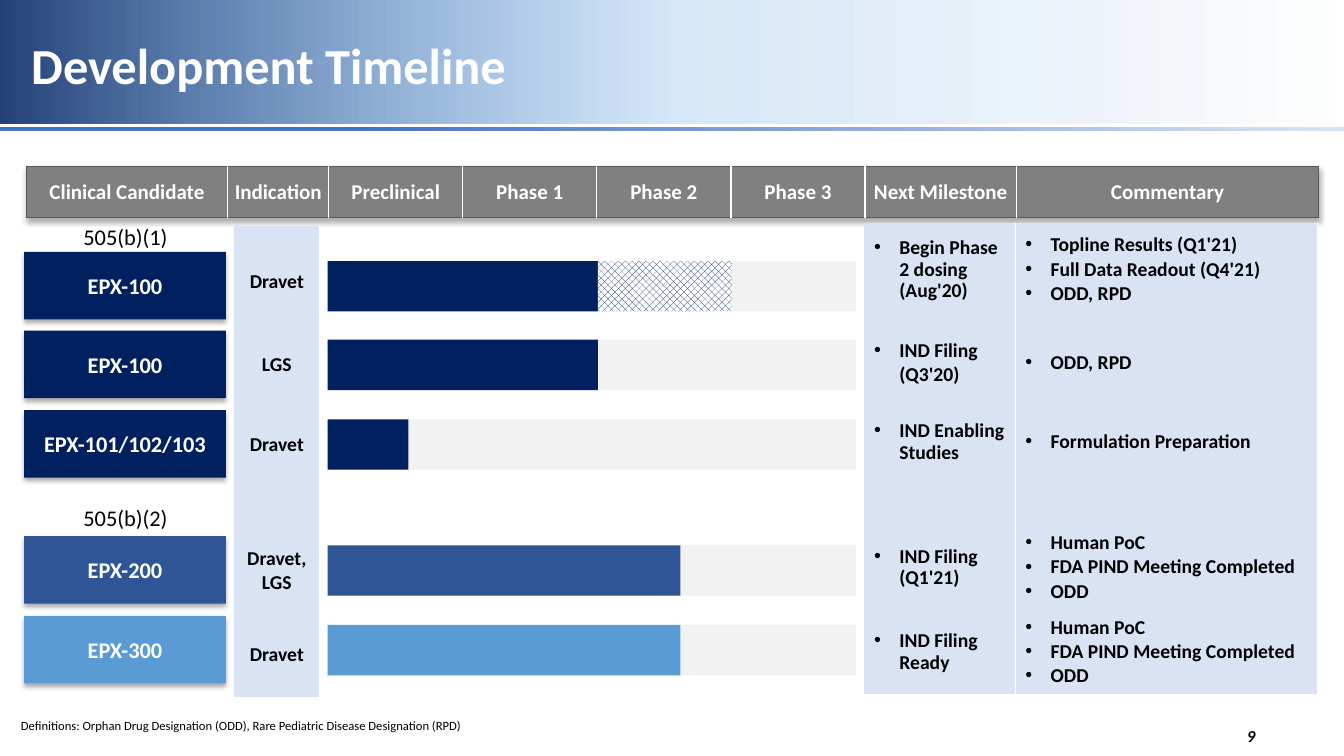
from pptx import Presentation
from pptx.dml.color import RGBColor
from pptx.enum.dml import MSO_PATTERN
from pptx.enum.shapes import MSO_SHAPE
from pptx.enum.text import MSO_ANCHOR, MSO_AUTO_SIZE, PP_ALIGN
from pptx.oxml import parse_xml
from pptx.util import Emu, Pt

PX = 9144
NS = 'xmlns:a="http://schemas.openxmlformats.org/drawingml/2006/main"'
NO_STYLE = "{2D5ABB26-0587-4C30-8999-92F81FD0307C}"
C = {
    "navy": "002060", "blue": "2F5597", "sky": "5B9BD5", "track": "F2F2F2",
    "pale": "DAE3F3", "gray": "808080", "edge": "595959", "rule": "4472C4",
    "banner_mid": "217DD9", "banner_end": "1B67B3",
    "white": "FFFFFF", "black": "000000",
}
SHADOW = (f'<a:effectLst {NS}><a:outerShdw blurRad="44450" dist="27940" dir="5400000" '
          f'algn="ctr" rotWithShape="0"><a:srgbClr val="{C["black"]}"><a:alpha val="32000"/>'
          '</a:srgbClr></a:outerShdw></a:effectLst>')


def rgb(name):
    return RGBColor.from_string(C[name])


class Deck:
    font = "Calibri"

    def __init__(self, width, height):
        self.prs = Presentation()
        self.prs.slide_width, self.prs.slide_height = Emu(width * PX), Emu(height * PX)
        self.s = self.prs.slides.add_slide(self.prs.slide_layouts[6])

    def box(self, *at):
        return [Emu(v * PX) for v in at]

    def set_text(self, tf, lines, size, color, bold=False, italic=False,
                 align=PP_ALIGN.CENTER, spacing=None, bullets=False):
        tf.text = "\n".join(lines)
        for i, p in enumerate(tf.paragraphs):
            p.alignment = align
            if spacing:
                p.line_spacing = spacing
            if bullets:
                p.space_before = Pt(2 if i else 0)
                self.bullet(p, not p.text.startswith("("))
            for r in p.runs:
                f = r.font
                f.name, f.size, f.bold, f.italic = self.font, Pt(size), bold, italic
                f.color.rgb = rgb(color)

    def bullet(self, p, marked):
        pPr = p._p.get_or_add_pPr()
        pPr.set("marL", str(25 * PX))
        pPr.set("indent", str(-25 * PX if marked else 0))
        if marked:
            pPr.append(parse_xml(f'<a:buFont {NS} typeface="Arial"/>'))
            pPr.append(parse_xml(f'<a:buChar {NS} char="•"/>'))

    def rect(self, at, color):
        sp = self.s.shapes.add_shape(MSO_SHAPE.RECTANGLE, *self.box(*at))
        sp.shadow.inherit = False
        sp.line.fill.background()
        sp.fill.solid()
        sp.fill.fore_color.rgb = rgb(color)
        return sp

    def gradient(self, at, stops, angle):
        sp = self.rect(at, stops[0][1])
        gs = "".join(f'<a:gs pos="{pos * 1000}"><a:srgbClr val="{C[color]}">'
                     f'<a:alpha val="{alpha * 1000}"/></a:srgbClr></a:gs>'
                     for pos, color, alpha in stops)
        grad = parse_xml(f'<a:gradFill {NS} rotWithShape="1"><a:gsLst>{gs}</a:gsLst>'
                         f'<a:lin ang="{angle * 60000}" scaled="0"/></a:gradFill>')
        spPr = sp._element.spPr
        spPr.replace(spPr.find("{*}solidFill"), grad)

    def hatch(self, at, color):
        fill = self.rect(at, color).fill
        fill.patterned()
        fill.pattern = MSO_PATTERN.PERCENT_50
        fill.fore_color.rgb, fill.back_color.rgb = rgb(color), rgb("white")

    def candidate(self, at, name, color):
        sp = self.rect(at, color)
        spPr = sp._element.spPr
        spPr.replace(spPr.find("{*}effectLst"), parse_xml(SHADOW))
        tf = sp.text_frame
        tf.vertical_anchor = MSO_ANCHOR.MIDDLE
        self.set_text(tf, [name], 16, "white", bold=True)

    def text(self, at, line, size, color="black", wrap=True, grow=False,
             anchor=MSO_ANCHOR.MIDDLE, insets=(10, 5, 10, 5), **style):
        tf = self.s.shapes.add_textbox(*self.box(*at)).text_frame
        tf.word_wrap = wrap
        tf.auto_size = MSO_AUTO_SIZE.SHAPE_TO_FIT_TEXT if grow else MSO_AUTO_SIZE.NONE
        tf.vertical_anchor = anchor
        tf.margin_left, tf.margin_top, tf.margin_right, tf.margin_bottom = self.box(*insets)
        self.set_text(tf, [line], size, color, **style)

    def table(self, left, top, cols, rows):
        at = self.box(left, top, sum(cols), sum(rows))
        t = self.s.shapes.add_table(len(rows), len(cols), *at).table
        t.first_row = t.horz_banding = False
        t._tbl.tblPr.find("{*}tableStyleId").text = NO_STYLE
        for col, width in zip(t.columns, cols):
            col.width = Emu(width * PX)
        for row, height in zip(t.rows, rows):
            row.height = Emu(height * PX)
        return t

    def cell(self, cell, lines, size, color, fill, borders, insets=(10, 5, 10, 5), **style):
        cell.vertical_anchor = MSO_ANCHOR.MIDDLE
        cell.margin_left, cell.margin_top, cell.margin_right, cell.margin_bottom = self.box(*insets)
        cell.fill.solid()
        cell.fill.fore_color.rgb = rgb(fill)
        for i, (side, edge) in enumerate(borders.items()):
            cell._tc.get_or_add_tcPr().insert(i, parse_xml(
                f'<a:ln{side} {NS} w="12700"><a:solidFill><a:srgbClr val="{C[edge]}"/>'
                f'</a:solidFill></a:ln{side}>'))
        if lines:
            self.set_text(cell.text_frame, lines, size, color, bold=True, **style)


def main():
    d = Deck(1333, 750)
    d.gradient((0, -3, 1333, 126),
               [(0, "banner_end", 0), (50, "banner_mid", 18), (100, "navy", 85)], 180)
    d.gradient((0, 126, 1333, 4), [(26, "rule", 100), (100, "pale", 100)], 0)
    d.text((0, 13, 1242, 110), "Development Timeline", 36, "white", insets=(31, 0, 10, 0),
           bold=True, align=PP_ALIGN.LEFT, spacing=0.9)
    d.text((955, 710, 300, 40), "9", 12, bold=True, italic=True, align=PP_ALIGN.RIGHT)

    candidates = [("EPX-100", 250, "navy", 268), ("EPX-100", 328, "navy", 268),
                  ("EPX-101/102/103", 407, "navy", 80), ("EPX-200", 532, "blue", 350),
                  ("EPX-300", 611, "sky", 350)]
    for name, top, color, progress in candidates:
        d.rect((325, top + 9, 524, 50), "track")
        d.rect((325, top + 9, progress, 50), color)
        d.candidate((24, top, 200, 67), name, color)
    d.hatch((593, 259, 133, 50), "navy")
    for pathway, top in (("505(b)(1)", 216), ("505(b)(2)", 495)):
        d.text((53, top, 143, 37), pathway, 16, grow=True)

    headings = ["Clinical Candidate", "Indication", "Preclinical", "Phase 1", "Phase 2",
                "Phase 3", "Next Milestone", "Commentary"]
    header = d.table(26, 165, [200, 100] + [133] * 4 + [150, 300], [51])
    header._tbl.tblPr.insert(0, parse_xml(SHADOW))
    last = len(headings) - 1
    for i, heading in enumerate(headings):
        borders = {"L": "white" if i else "edge", "R": "white" if i < last else "edge",
                   "T": "edge", "B": "edge"}
        d.cell(header.cell(0, i), [heading], 15, "white", "gray", borders, (1, 1, 1, 0))

    poc = ["Human PoC", "FDA PIND Meeting Completed", "ODD"]
    plans = [
        (["Begin Phase 2 dosing (Aug'20)"],
         ["Topline Results (Q1'21)", "Full Data Readout (Q4'21)", "ODD, RPD"]),
        (["IND Filing", "(Q3'20)"], ["ODD, RPD"]),
        (["IND Enabling Studies"], ["Formulation Preparation"]),
        ([], []),
        (["IND Filing (Q1'21)"], poc),
        (["IND Filing Ready"], poc),
    ]
    plan_table = d.table(857, 221, [150, 300], [93, 83, 83, 41, 84, 84])
    for row, plan in enumerate(plans):
        for col, lines in enumerate(plan):
            borders = {"L": "white", "R": "white"} if col else {"R": "white"}
            d.cell(plan_table.cell(row, col), lines, 14, "black", "pale", borders,
                   (10, 15 if row == 1 else 5, 10, 5),
                   align=PP_ALIGN.LEFT, spacing=0.9, bullets=True)

    indications = [("Dravet", 25), ("LGS", 15), ("Dravet", 5), ("", 5),
                   ("Dravet, LGS", 5), ("Dravet", 5)]
    indication_table = d.table(232, 224, [85], [91, 84, 84, 41, 84, 84])
    for row, (name, inset) in enumerate(indications):
        d.cell(indication_table.cell(row, 0), [name] if name else [], 14, "black", "pale",
               {"R": "white"}, (10, inset, 10, 5))

    d.text((11, 707, 461, 25),
           "Definitions: Orphan Drug Designation (ODD), Rare Pediatric Disease Designation (RPD)",
           9, wrap=False, grow=True, anchor=MSO_ANCHOR.TOP, align=PP_ALIGN.LEFT)
    d.prs.save("out.pptx")


if __name__ == "__main__":
    main()
